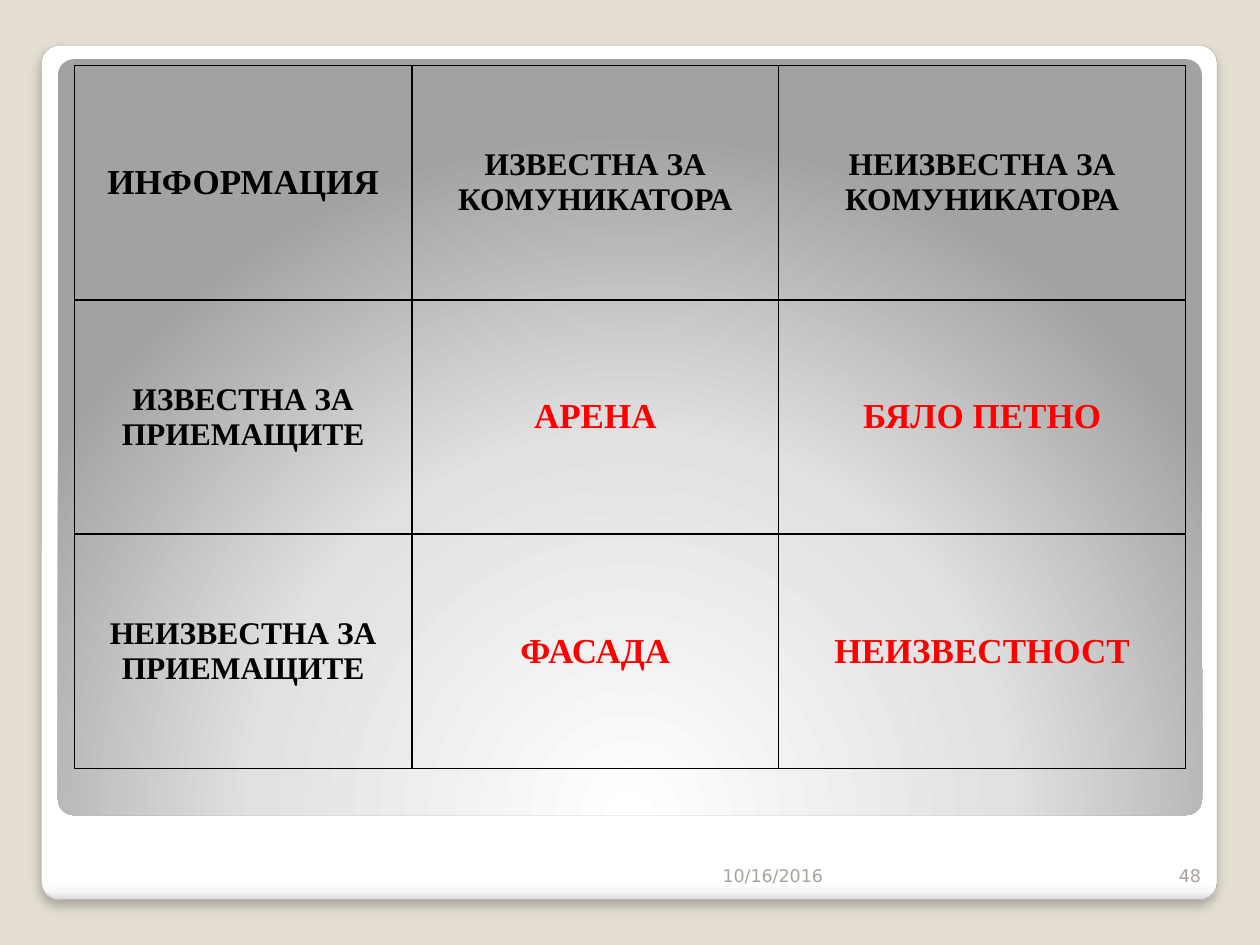
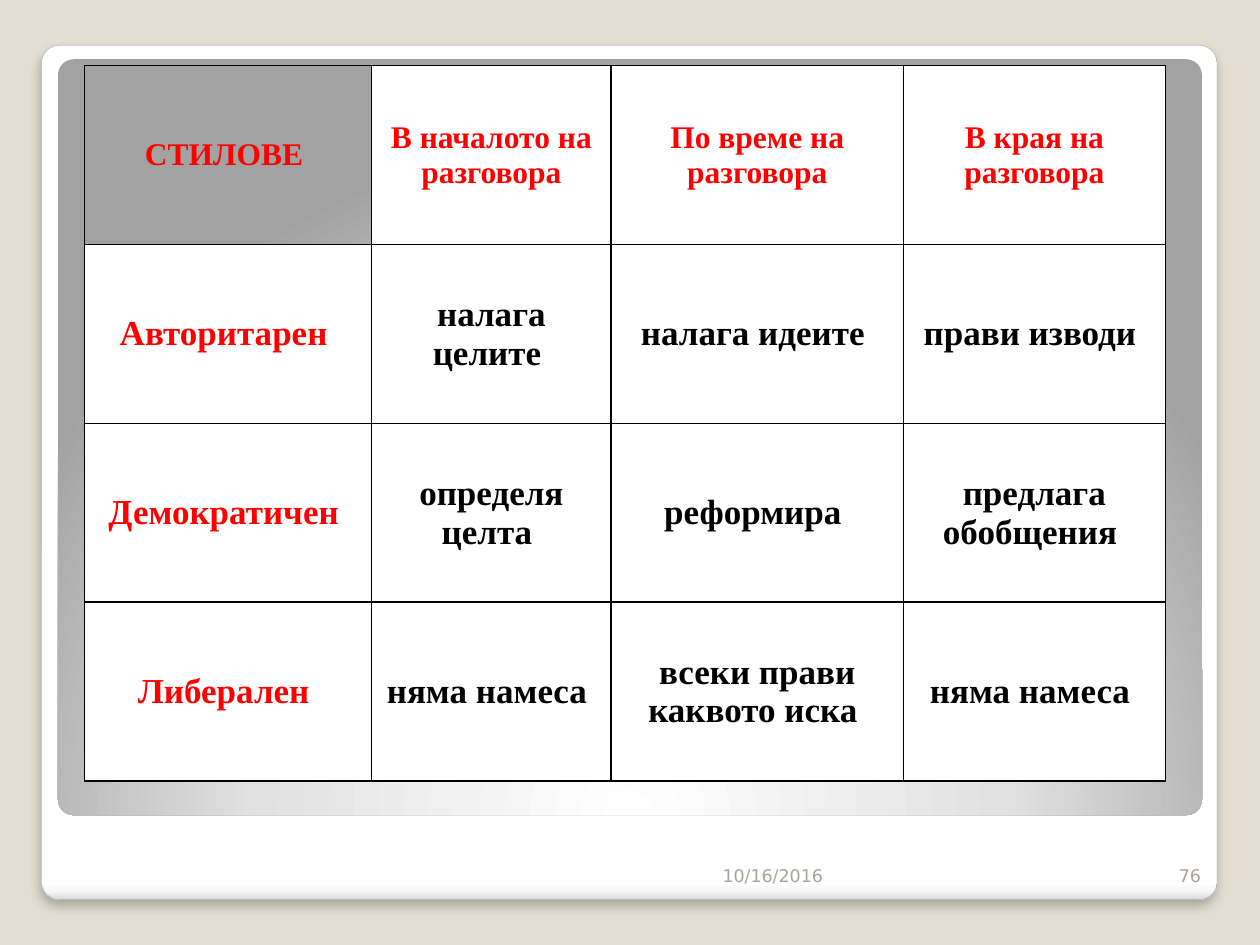
"""Build two slides with framed tables on communication and conversation styles."""
from lxml import etree
from pptx import Presentation
from pptx.dml.color import RGBColor
from pptx.enum.shapes import MSO_SHAPE
from pptx.enum.text import MSO_ANCHOR, PP_ALIGN
from pptx.oxml.ns import qn
from pptx.util import Inches, Pt

BACKGROUND = RGBColor(0xE3, 0xDE, 0xD1)
BLACK = RGBColor(0, 0, 0)
WHITE = RGBColor(0xFF, 0xFF, 0xFF)
RED = RGBColor(0xFF, 0, 0)
FRAME_LINE = RGBColor(0xA4, 0xA4, 0xA4)
FOOTER_GREY = RGBColor(0xA8, 0xA4, 0x9B)
SILVER = RGBColor(0xE1, 0xE1, 0xE1)
STEEL = RGBColor(0xA2, 0xA2, 0xA2)
MIST = RGBColor(0xF7, 0xF7, 0xF7)
EDGE = RGBColor(0xDA, 0xDA, 0xDA)

TABLE_FONT = "Times New Roman"
FOOTER_FONT = "DejaVu Sans"
DATE = "10/16/2016"

CARD_BOX = (0.33, 0.36, 9.33, 6.78)
PANEL_BOX = (0.46, 0.47, 9.08, 6)
DATE_BOX = (4.13, 6.68, 2.5, 0.4)
NUMBER_BOX = (9.13, 6.68, 0.5, 0.4)

INFORMATION = [
    ["ИНФОРМАЦИЯ", "ИЗВЕСТНА ЗА КОМУНИКАТОРА", "НЕИЗВЕСТНА ЗА КОМУНИКАТОРА"],
    ["ИЗВЕСТНА ЗА ПРИЕМАЩИТЕ", "АРЕНА", "БЯЛО ПЕТНО"],
    ["НЕИЗВЕСТНА ЗА ПРИЕМАЩИТЕ", "ФАСАДА", "НЕИЗВЕСТНОСТ"],
]
STYLES = [
    ["СТИЛОВЕ ", "В началото на разговора", "По време на разговора", "В края на разговора"],
    ["Авторитарен ", "налага целите ", "налага идеите ", "прави изводи "],
    ["Демократичен ", "определя целта ", "реформира ", "предлага обобщения "],
    ["Либерален ", "няма намеса ", "всеки прави каквото иска ", "няма намеса "],
]


def add_element(parent, tag, **attributes):
    """Append a drawing element with the given attributes."""
    values = {name: str(value) for name, value in attributes.items()}
    return etree.SubElement(parent, qn(tag), values)


def add_colour(parent, colour):
    """Append a plain RGB colour element."""
    return add_element(parent, "a:srgbClr", val=colour)


def set_gradient(shape, stops):
    """Give the shape a gradient fill and return its element."""
    shape.fill.background()
    properties = shape._element.spPr
    gradient = etree.Element(qn("a:gradFill"), rotWithShape="1")
    properties.replace(properties.find(qn("a:noFill")), gradient)
    stop_list = add_element(gradient, "a:gsLst")
    for percent, colour in stops:
        add_colour(add_element(stop_list, "a:gs", pos=percent * 1000), colour)
    return gradient


def add_rounded(slide, box):
    """Add a slightly rounded rectangle without line or shadow."""
    shape = slide.shapes.add_shape(MSO_SHAPE.ROUNDED_RECTANGLE, *map(Inches, box))
    shape.adjustments[0] = 0.021
    shape.line.fill.background()
    shape.shadow.inherit = False
    return shape


def add_card(slide, box):
    """Add the white card with its soft shadow."""
    card = add_rounded(slide, box)
    gradient = set_gradient(card, [(0, WHITE), (98, WHITE), (99, MIST), (100, EDGE)])
    add_element(gradient, "a:lin", ang=90 * 60000, scaled=0)
    card.line.color.rgb = FRAME_LINE
    card.line.width = Pt(0.16)
    effects = card._element.spPr.find(qn("a:effectLst"))
    shadow = add_element(effects, "a:outerShdw", blurRad=Pt(6), dist=Pt(4),
                         dir=90 * 60000, algn="tl", rotWithShape=0)
    add_element(add_colour(shadow, BLACK), "a:alpha", val=25000)


def add_panel(slide, box):
    """Add the grey panel lit from its lower edge."""
    panel = add_rounded(slide, box)
    gradient = set_gradient(panel, [(0, WHITE), (55, SILVER), (100, STEEL)])
    circle = add_element(gradient, "a:path", path="circle")
    add_element(circle, "a:fillToRect", l=50000, t=175000, r=50000, b=-75000)


def write(frame, text, alignment, font_name, size, colour, bold=False):
    """Write one formatted run into a text frame."""
    paragraph = frame.paragraphs[0]
    paragraph.alignment = alignment
    run = paragraph.add_run()
    run.text = text
    run.font.name = font_name
    run.font.size = Pt(size)
    run.font.bold = bold
    run.font.color.rgb = colour


def add_footer(slide, box, text):
    """Add a right-aligned footer text."""
    frame = slide.shapes.add_textbox(*map(Inches, box)).text_frame
    frame.word_wrap = True
    frame.vertical_anchor = MSO_ANCHOR.BOTTOM
    write(frame, text, PP_ALIGN.RIGHT, FOOTER_FONT, 10, FOOTER_GREY)


def set_borders(cell):
    """Draw thin black borders on all sides of a cell."""
    properties = cell._tc.get_or_add_tcPr()
    for index, side in enumerate(("a:lnL", "a:lnR", "a:lnT", "a:lnB")):
        line = etree.Element(qn(side), w=str(Pt(1)))
        add_colour(add_element(line, "a:solidFill"), BLACK)
        properties.insert(index, line)


def information_style(row, column):
    """Return size, colour and fill for the information table."""
    is_heading = row == 0 or column == 0
    is_corner = row == column == 0
    return 18 if is_heading and not is_corner else 20, BLACK if is_heading else RED, None


def conversation_style(row, column):
    """Return size, colour and fill for the conversation table."""
    is_heading = row == 0 or column == 0
    fill = None if row == column == 0 else WHITE
    return 18 if row == 0 else 20, RED if is_heading else BLACK, fill


def add_grid(slide, left, top, widths, row_height, texts, style):
    """Add a bordered table whose cells follow the given style rule."""
    table = slide.shapes.add_table(
        len(texts), len(widths), Inches(left), Inches(top),
        Inches(sum(widths)), Inches(row_height * len(texts))).table
    table.first_row = table.horz_banding = False
    for column, width in zip(table.columns, widths):
        column.width = Inches(width)
    for row_index, row_texts in enumerate(texts):
        table.rows[row_index].height = Inches(row_height)
        for column_index, text in enumerate(row_texts):
            cell = table.cell(row_index, column_index)
            size, colour, fill = style(row_index, column_index)
            if fill is None:
                cell.fill.background()
            else:
                cell.fill.solid()
                cell.fill.fore_color.rgb = fill
            cell.vertical_anchor = MSO_ANCHOR.MIDDLE
            write(cell.text_frame, text, PP_ALIGN.CENTER, TABLE_FONT, size, colour, True)
            set_borders(cell)


def add_table_slide(presentation, number, *grid):
    """Add a framed slide with a table, date and number."""
    slide = presentation.slides.add_slide(presentation.slide_layouts[6])
    add_card(slide, CARD_BOX)
    add_panel(slide, PANEL_BOX)
    add_footer(slide, NUMBER_BOX, number)
    add_grid(slide, *grid)
    add_footer(slide, DATE_BOX, DATE)


def main():
    """Build and save the presentation."""
    presentation = Presentation()
    presentation.slide_width = Inches(10)
    presentation.slide_height = Inches(7.5)
    background = presentation.slide_master.background.fill
    background.solid()
    background.fore_color.rgb = BACKGROUND
    add_table_slide(presentation, "48", 0.59, 0.52, [2.68, 2.91, 3.23], 1.86,
                    INFORMATION, information_style)
    add_table_slide(presentation, "76", 0.67, 0.52, [2.28, 1.9, 2.32, 2.08], 1.42,
                    STYLES, conversation_style)
    presentation.save("out.pptx")


if __name__ == "__main__":
    main()
